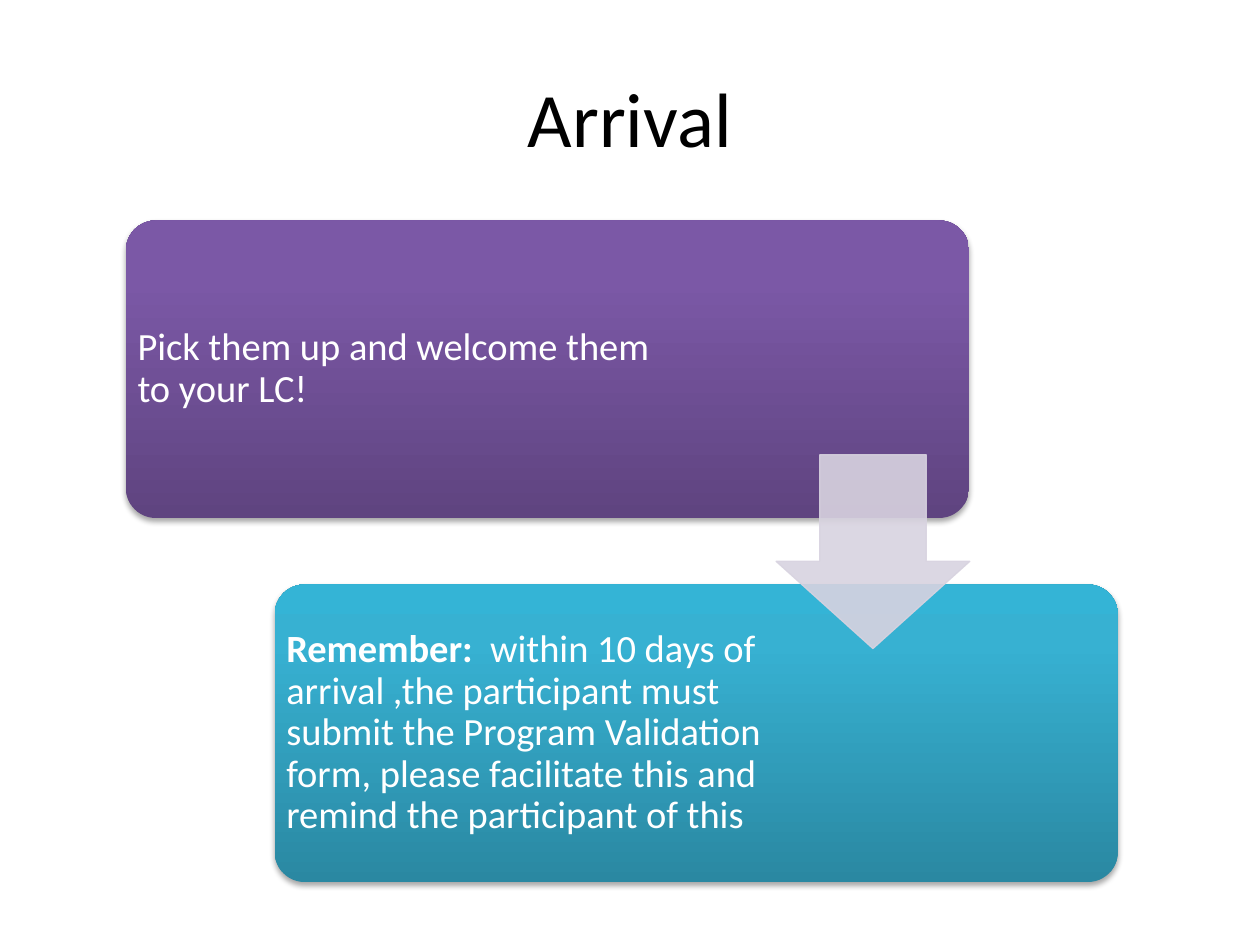
from lxml import etree
from pptx import Presentation
from pptx.dml.color import RGBColor
from pptx.enum.shapes import MSO_SHAPE as SHAPE
from pptx.enum.text import MSO_ANCHOR as ANCHOR, PP_ALIGN as ALIGN
from pptx.oxml.ns import qn
from pptx.util import Pt

FONT = "Calibri"
CARD_W, CARD_H = 481.68, 170
INSET = 6.6


def rgb(value):
    """Turn a hex string into a colour."""
    return RGBColor.from_string(value)


def sub(parent, tag, **attrs):
    """Append a DrawingML element with the given attributes."""
    return etree.SubElement(parent, qn(tag), {k: str(v) for k, v in attrs.items()})


def add_color(parent, color, alpha=100):
    """Append an RGB colour with an opacity in percent."""
    c = sub(parent, "a:srgbClr", val=color)
    if alpha < 100:
        sub(c, "a:alpha", val=alpha * 1000)


def add_text(slide, box, runs, size, color, align=ALIGN.LEFT, spacing=1.0):
    """Place a middle-anchored text box holding (text, bold) runs."""
    tf = slide.shapes.add_textbox(*map(Pt, box)).text_frame
    tf.word_wrap = True
    tf.vertical_anchor = ANCHOR.MIDDLE
    tf.margin_left = tf.margin_right = tf.margin_top = tf.margin_bottom = Pt(INSET)
    p = tf.paragraphs[0]
    p.alignment = align
    p.line_spacing = spacing
    for text, bold in runs:
        r = p.add_run()
        r.text = text
        r.font.name = FONT
        r.font.size = Pt(size)
        r.font.bold = bold
        r.font.color.rgb = rgb(color)


def add_gradient(s, colors):
    """Fill a shape with three colours running from bottom to top."""
    s.fill.gradient()
    s.fill.gradient_angle = 90
    stops = s._element.spPr.find(qn("a:gradFill")).find(qn("a:gsLst"))
    for stop in list(stops):
        stops.remove(stop)
    for pos, color in zip((0, 80, 100), colors):
        add_color(sub(stops, "a:gs", pos=pos * 1000), color)


def add_shadow(s):
    """Give a shape a soft shadow below it."""
    s.shadow.inherit = False
    effects = s._element.spPr.find(qn("a:effectLst"))
    shadow = sub(effects, "a:outerShdw", blurRad=Pt(3.1), dist=Pt(1.8),
                 dir=90 * 60000, rotWithShape=0)
    add_color(shadow, "000000", 35)


def add_card(slide, left, top, text_width, colors, runs):
    """Draw one step: a rounded gradient card with text on its left."""
    s = slide.shapes.add_shape(SHAPE.ROUNDED_RECTANGLE,
                               *map(Pt, (left, top, CARD_W, CARD_H)))
    s.adjustments[0] = 0.1
    s.line.fill.background()
    add_gradient(s, colors)
    add_shadow(s)
    add_text(slide, (left, top, text_width, CARD_H), runs, 22, "FFFFFF", spacing=0.9)


def add_arrow(slide, left, top, size, color, alpha):
    """Draw the translucent arrow that leads to the next card."""
    s = slide.shapes.add_shape(SHAPE.DOWN_ARROW, *map(Pt, (left, top, size, size)))
    s.adjustments[0], s.adjustments[1] = 0.55, 0.45
    s.shadow.inherit = False
    s.line.width = Pt(0.75)
    for fill in (s.fill, s.line.fill):
        fill.solid()
        fill.fore_color.rgb = rgb(color)
    for c in s._element.spPr.iter(qn("a:srgbClr")):
        sub(c, "a:alpha", val=alpha * 1000)


def add_steps(slide, left, top):
    """Place the two staggered cards and the arrow between them."""
    add_card(slide, left, top, 316, ("5F4480", "7B58A6", "7C57A8"),
             [("Pick them up and welcome them to your LC!", False)])
    add_card(slide, left + 85, top + 208, 286.5, ("2A88A2", "37B1D2", "34B4D6"),
             [("Remember:", True),
              ("  within 10 days of arrival ,the participant must submit the "
               "Program Validation form, please facilitate this and remind "
               "the participant of this", False)])
    size = 110.7
    add_arrow(slide, left + CARD_W - size + 0.5, top + 133.9, size, "D8D3E0", 90)


def main():
    """Build and save the slide."""
    prs = Presentation()
    prs.slide_width, prs.slide_height = Pt(720), Pt(540)
    slide = prs.slides.add_slide(prs.slide_layouts[6])
    add_text(slide, (36, 21.6, 648, 90), [("Arrival", False)], 44, "000000", ALIGN.CENTER)
    add_steps(slide, 72, 126)
    prs.save("out.pptx")


if __name__ == "__main__":
    main()
